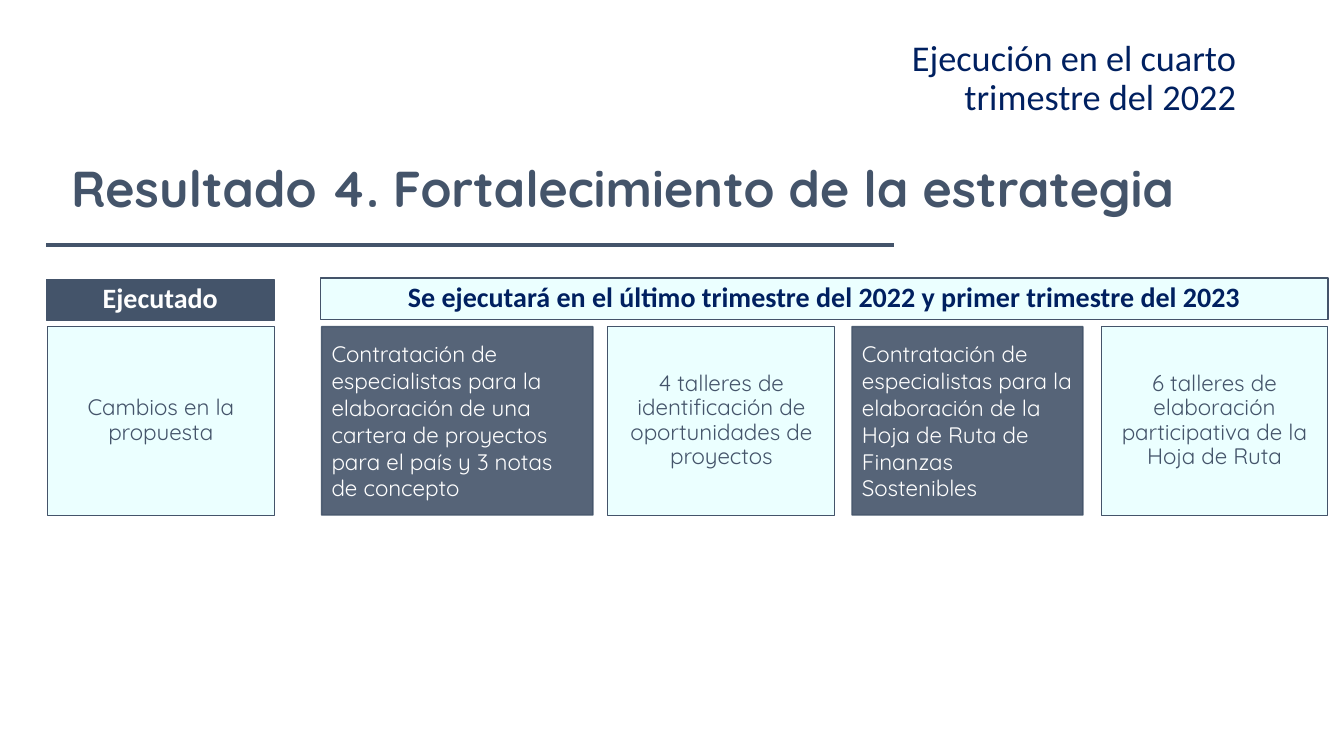
"""Build the slide on result 4: strengthening the strategy."""
from lxml.etree import SubElement
from pptx import Presentation
from pptx.dml.color import RGBColor
from pptx.enum.shapes import MSO_CONNECTOR, MSO_SHAPE
from pptx.enum.text import MSO_ANCHOR, PP_ALIGN
from pptx.oxml.ns import qn
from pptx.util import Inches, Pt

SLATE, ICE, NAVY, WHITE = "44546A", "EBFFFF", "002060", "FFFFFF"


def paint(color_format, color):
    color_format.rgb = RGBColor.from_string(color)


def write(shape, text, color, align, margins=(0.1, 0.05), spacing=0.9,
          anchor=MSO_ANCHOR.MIDDLE, **font):
    frame = shape.text_frame
    frame.word_wrap = True
    frame.vertical_anchor = anchor
    frame.margin_left = frame.margin_right = Inches(margins[0])
    frame.margin_top = frame.margin_bottom = Inches(margins[1])
    paragraph = frame.paragraphs[0]
    paragraph.alignment = align
    paragraph.line_spacing = spacing
    run = paragraph.add_run()
    run.text = text
    for attribute, value in font.items():
        setattr(run.font, attribute, value)
    paint(run.font.color, color)


presentation = Presentation()
presentation.slide_width, presentation.slide_height = Inches(13.33), Inches(7.5)
slide = presentation.slides.add_slide(presentation.slide_layouts[6])
shapes = slide.shapes

title = shapes.add_textbox(Inches(0.46), Inches(1.49), Inches(11.43), Inches(0.81))
write(title, "Resultado 4. Fortalecimiento de la estrategia", SLATE, PP_ALIGN.CENTER,
      name="Quicksand", size=Pt(36), bold=True)

period = shapes.add_textbox(Inches(8.71), Inches(0.35), Inches(3.65), Inches(0.94))
write(period, "Ejecución en el cuarto trimestre del 2022", NAVY, PP_ALIGN.RIGHT,
      anchor=MSO_ANCHOR.TOP, name="Calibri", size=Pt(25.9))

title_rule = shapes.add_connector(MSO_CONNECTOR.STRAIGHT, Inches(0.46), Inches(2.43),
                                  Inches(8.87), Inches(2.43))
title_rule.line.width = Pt(2.25)
paint(title_rule.line.color, SLATE)
SubElement(title_rule._element.spPr, qn("a:effectLst"))

headers = [
    (0.46, 2.77, 2.26, SLATE, WHITE, "Ejecutado"),
    (3.18, 2.76, 9.99, ICE, NAVY,
     "Se ejecutará en el último trimestre del 2022 y primer trimestre del 2023"),
]
for left, top, width, fill, color, text in headers:
    header = shapes.add_shape(MSO_SHAPE.RECTANGLE, Inches(left), Inches(top),
                              Inches(width), Inches(0.41))
    header.shadow.inherit = False
    header.fill.solid()
    paint(header.fill.fore_color, fill)
    paint(header.line.color, SLATE)
    header.line.width = Pt(1)
    write(header, text, color, PP_ALIGN.CENTER, (0.19, 0.11),
          name="Calibri", size=Pt(20), bold=True)

activities = [
    (0.47, 2.25, False, "Cambios en la propuesta"),
    (3.19, 2.69, True, "Contratación de especialistas para la elaboración de una "
     "cartera de proyectos para el país y 3 notas de concepto"),
    (6.03, 2.25, False, "4 talleres de identificación de oportunidades de proyectos"),
    (8.45, 2.29, True, "Contratación de especialistas para la elaboración de la "
     "Hoja de Ruta de Finanzas Sostenibles"),
    (10.92, 2.25, False, "6 talleres de elaboración participativa de la Hoja de Ruta"),
]
for left, width, is_hiring, text in activities:
    activity = shapes.add_shape(MSO_SHAPE.RECTANGLE, Inches(left), Inches(3.24),
                                Inches(width), Inches(1.87))
    activity.shadow.inherit = False
    activity.fill.solid()
    paint(activity.fill.fore_color, SLATE if is_hiring else ICE)
    paint(activity.line.color, SLATE)
    activity.line.width = Pt(1 if is_hiring else 0.75)
    if is_hiring:
        for tint in activity._element.spPr.iter(qn("a:srgbClr")):
            SubElement(tint, qn("a:alpha"), val="90000")
        write(activity, text, WHITE, PP_ALIGN.LEFT, spacing=1.0,
              name="Quicksand", size=Pt(16))
    else:
        write(activity, text, SLATE, PP_ALIGN.CENTER, (0.19, 0.11),
              name="Quicksand", size=Pt(16))

presentation.save("out.pptx")
